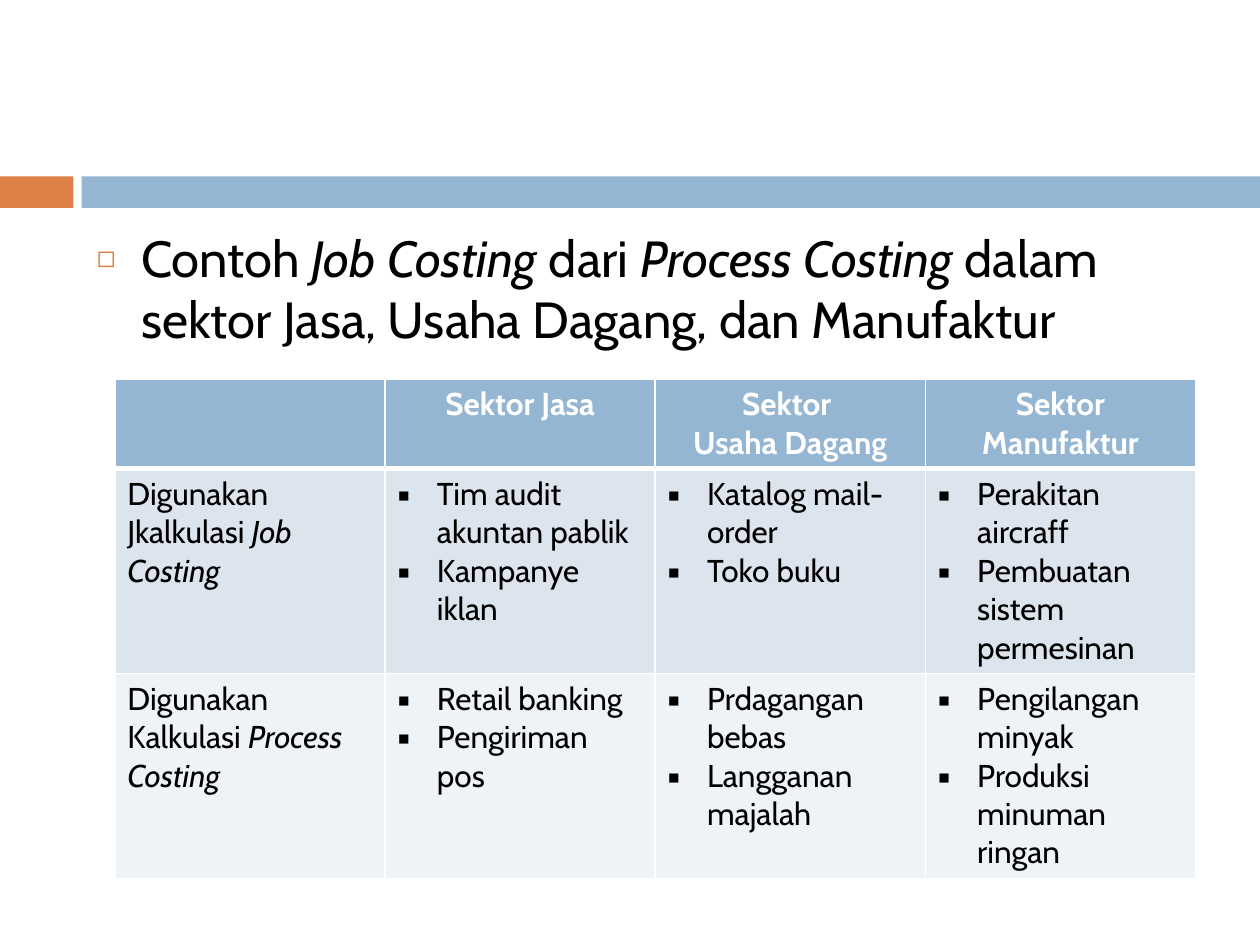
"""Build a slide comparing job costing and process costing by sector."""
import pptx
import pptx.dml.color
import pptx.enum.shapes
import pptx.enum.text
import pptx.oxml.ns
import pptx.util
from lxml import etree

Pt = pptx.util.Pt
qn = pptx.oxml.ns.qn
BLUE, ORANGE, WHITE, BLACK = "94B6D2", "DD8047", "FFFFFF", "000000"


def rgb(value):
    return pptx.dml.color.RGBColor.from_string(value)


def color_child(parent, tag, color):
    node = etree.SubElement(parent, qn(tag))
    etree.SubElement(node, qn("a:srgbClr"), val=color)


class Deck:
    font = "Cabin"

    def __init__(self, width, height):
        self.prs = pptx.Presentation()
        self.prs.slide_width, self.prs.slide_height = Pt(width), Pt(height)
        self.s = self.prs.slides.add_slide(self.prs.slide_layouts[1])
        title = self.s.shapes.title.element
        title.getparent().remove(title)

    def bar(self, x, y, w, h, color):
        sp = self.s.shapes.add_shape(
            pptx.enum.shapes.MSO_SHAPE.RECTANGLE, Pt(x), Pt(y), Pt(w), Pt(h))
        sp.shadow.inherit = False
        sp.fill.solid()
        sp.fill.fore_color.rgb = rgb(color)
        sp.line.fill.background()

    def add_text(self, p, text, size, color=BLACK, bold=False):
        for i, part in enumerate(text.split("*")):
            if part:
                r = p.add_run()
                r.text = part
                r.font.name, r.font.size = self.font, Pt(size)
                r.font.bold, r.font.italic = bold, i % 2 == 1
                r.font.color.rgb = rgb(color)

    def bullet(self, p, char, indent, color=BLACK, percent=100):
        pPr = p._p.get_or_add_pPr()
        pPr.set("marL", str(Pt(indent)))
        pPr.set("indent", str(-Pt(indent)))
        color_child(pPr, "a:buClr", color)
        etree.SubElement(pPr, qn("a:buSzPct"), val=str(percent * 1000))
        etree.SubElement(pPr, qn("a:buFont"), typeface=self.font)
        etree.SubElement(pPr, qn("a:buChar"), char=char)

    def body(self, x, y, w, h, text):
        sp = self.s.placeholders[1]
        sp.left, sp.top, sp.width, sp.height = Pt(x), Pt(y), Pt(w), Pt(h)
        tf = sp.text_frame
        tf.auto_size = pptx.enum.text.MSO_AUTO_SIZE.NONE
        p = tf.paragraphs[0]
        p.space_before = Pt(7)
        self.bullet(p, "◻", 25.2, ORANGE, 60)
        self.add_text(p, text, 29)

    def borders(self, cell, bottom):
        tcPr = cell._tc.get_or_add_tcPr()
        widths = {"a:lnL": 1, "a:lnR": 1, "a:lnT": 1, "a:lnB": bottom}
        for i, (tag, width) in enumerate(widths.items()):
            ln = etree.Element(qn(tag), w=str(Pt(width)))
            color_child(ln, "a:solidFill", WHITE)
            tcPr.insert(i, ln)

    def cell(self, cell, lines, fill, header, bulleted):
        cell.fill.solid()
        cell.fill.fore_color.rgb = rgb(fill)
        self.borders(cell, 3 if header else 1)
        tf = cell.text_frame
        for i, line in enumerate(lines):
            p = tf.add_paragraph() if i else tf.paragraphs[0]
            if header:
                p.alignment = pptx.enum.text.PP_ALIGN.CENTER
            if bulleted:
                self.bullet(p, "▪", 22.5)
            self.add_text(p, line, 18, WHITE if header else BLACK, header)

    def table(self, x, y, w, heights, rows, fills):
        frame = self.s.shapes.add_table(
            len(rows), len(rows[0]), Pt(x), Pt(y), Pt(w), Pt(sum(heights)))
        for i, (row, height, fill) in enumerate(zip(rows, heights, fills)):
            frame.table.rows[i].height = Pt(height)
            for j, lines in enumerate(row):
                self.cell(frame.table.cell(i, j), lines, fill, i == 0, i > 0 and j > 0)


def main():
    deck = Deck(720, 540)
    deck.bar(0, 100.8, 42, 18, ORANGE)
    deck.bar(46.6, 100.8, 673.4, 18, BLUE)
    deck.body(48.2, 126, 642.2, 354.2,
              "Contoh *Job Costing* dari *Process Costing* dalam sektor Jasa, "
              "Usaha Dagang, dan Manufaktur")
    rows = [
        [[], ["Sektor Jasa"], ["Sektor ", "Usaha Dagang"], ["Sektor", "Manufaktur"]],
        [["Digunakan Jkalkulasi *Job Costing*"],
         ["Tim audit akuntan pablik", "Kampanye iklan"],
         ["Katalog mail-order", "Toko buku"],
         ["Perakitan aircraff", "Pembuatan sistem permesinan"]],
        [["Digunakan Kalkulasi *Process Costing*"],
         ["Retail banking", "Pengiriman pos"],
         ["Prdagangan bebas", "Langganan majalah"],
         ["Pengilangan minyak", "Produksi minuman ringan"]],
    ]
    deck.table(65.6, 216.6, 617.6, [51, 116.6, 116.6], rows, [BLUE, "DCE5EE", "EEF3F7"])
    deck.prs.save("out.pptx")


if __name__ == "__main__":
    main()
